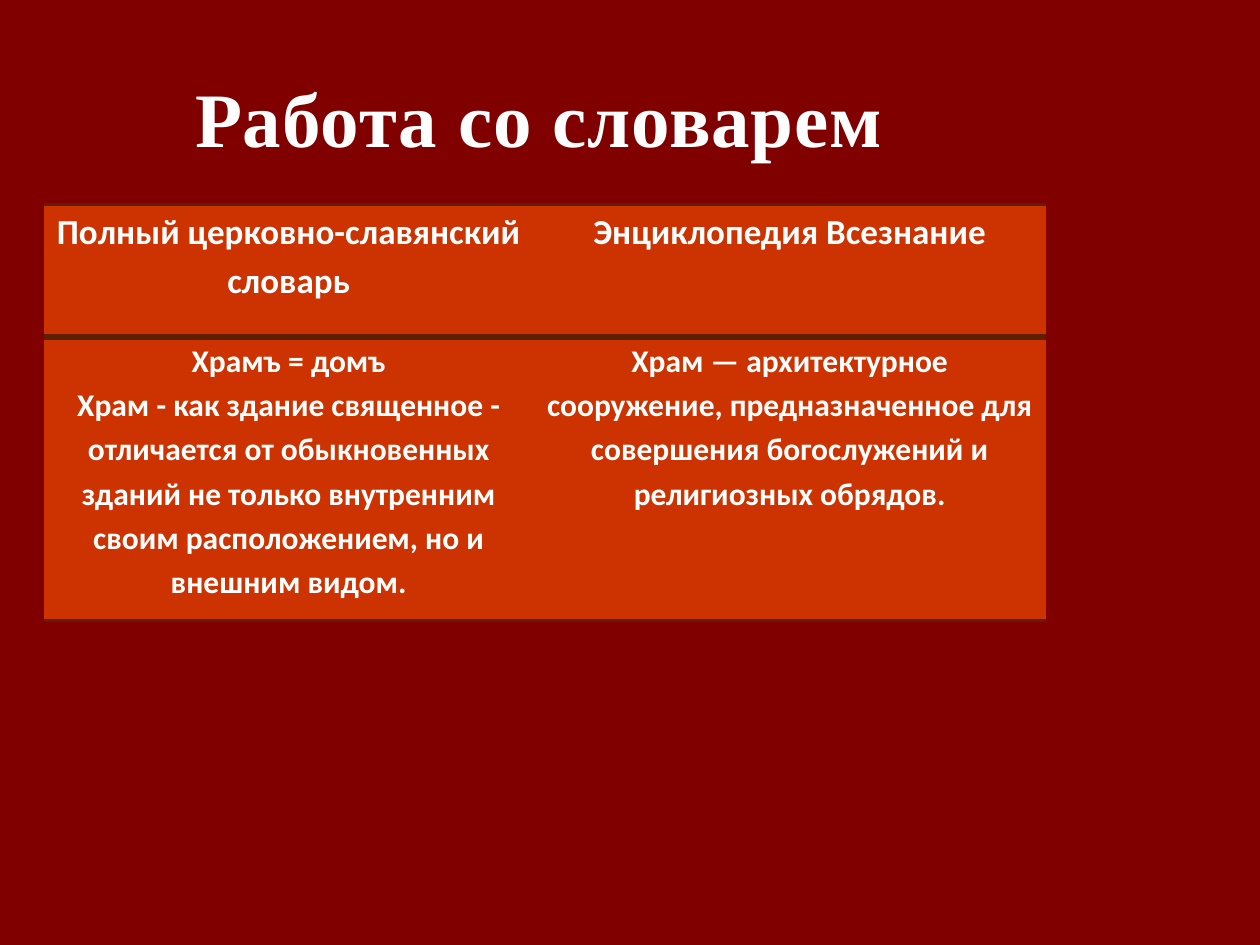
from dataclasses import dataclass

from lxml.etree import SubElement
from pptx import Presentation
from pptx.dml.color import RGBColor
from pptx.enum.text import MSO_ANCHOR, PP_ALIGN
from pptx.oxml import parse_xml
from pptx.oxml.ns import nsdecls, qn
from pptx.util import Cm, Pt

# Content: each cell is a list of paragraphs
TITLE = "Работа со словарем"
ROWS = [
    [["Полный церковно-славянский словарь"], ["Энциклопедия Всезнание"]],
    [
        ["Храмъ = домъ",
         "Храм - как здание священное - отличается от обыкновенных зданий "
         "не только внутренним своим расположением, но и внешним видом."],
        ["Храм — архитектурное сооружение, предназначенное для "
         "совершения богослужений и религиозных обрядов."],
    ],
]

# Layout in centimetres
SLIDE = (25.4, 19.05)
HEAD = (1.27, 0.76, 19.2, 3.18)
LEFT, TOP = 0.89, 4.12
WIDTHS = (9.86, 10.34)
HEIGHTS = (2.67, 5.72)
PAD = 0.18


@dataclass
class Theme:
    back: str = "800000"
    cell: str = "CC3300"
    rule: str = "5C1F00"
    title: str = "FEFEFE"
    text: str = "FFFFFF"
    serif: str = "Times New Roman"
    sans: str = "Calibri"
    head: int = 44
    sizes: tuple = (20, 18)     # text size of each table row
    rules: tuple = (2, 4, 2)    # rule above, between and below the rows


THEME = Theme()


def add_run(para, text, size, face, color):
    run = para.add_run()
    run.text = text
    font = run.font
    font.size, font.name, font.bold = Pt(size), face, True
    font.color.rgb = RGBColor.from_string(color)
    return run


def add_edges(cell, above, below):
    """Rule the top and bottom of a cell, leaving its sides open."""
    props = cell._tc.get_or_add_tcPr()
    sides = (("L", 0), ("R", 0), ("T", above), ("B", below))
    for spot, (side, width) in enumerate(sides):
        line = SubElement(props, qn(f"a:ln{side}"), w=str(Pt(width)))
        if width:
            fill = SubElement(line, qn("a:solidFill"))
            SubElement(fill, qn("a:srgbClr"), val=THEME.rule)
        else:
            SubElement(line, qn("a:noFill"))
        props.insert(spot, line)


def add_title(slide):
    box = slide.shapes.add_textbox(*map(Cm, HEAD))
    frame = box.text_frame
    frame.word_wrap = True
    frame.vertical_anchor = MSO_ANCHOR.MIDDLE
    para = frame.paragraphs[0]
    para.alignment = PP_ALIGN.CENTER
    run = add_run(para, TITLE, THEME.head, THEME.serif, THEME.title)
    # Letter spacing and soft text shadow
    props = run.font._element
    props.set("spc", "50")
    props.find(qn("a:solidFill")).addnext(parse_xml(
        f'<a:effectLst {nsdecls("a")}>'
        '<a:outerShdw blurRad="38100" dist="38100" dir="2700000">'
        f'<a:srgbClr val="{THEME.rule}"/></a:outerShdw></a:effectLst>'))


def fill_cell(cell, texts, row):
    cell.fill.solid()
    cell.fill.fore_color.rgb = RGBColor.from_string(THEME.cell)
    cell.margin_left = cell.margin_right = Cm(PAD)
    cell.margin_top = cell.margin_bottom = 0
    add_edges(cell, *THEME.rules[row:row + 2])
    frame = cell.text_frame
    for spot, text in enumerate(texts):
        para = frame.add_paragraph() if spot else frame.paragraphs[0]
        para.alignment = PP_ALIGN.CENTER
        para.line_spacing = 1.15
        add_run(para, text, THEME.sizes[row], THEME.sans, THEME.text)


def add_grid(slide):
    size = (LEFT, TOP, sum(WIDTHS), sum(HEIGHTS))
    shape = slide.shapes.add_table(len(ROWS), len(WIDTHS), *map(Cm, size))
    table = shape.table
    table.first_row = table.horz_banding = False
    for col, width in zip(table.columns, WIDTHS):
        col.width = Cm(width)
    for row, height in zip(table.rows, HEIGHTS):
        row.height = Cm(height)
    for r, cells in enumerate(ROWS):
        for c, texts in enumerate(cells):
            fill_cell(table.cell(r, c), texts, r)


def main():
    deck = Presentation()
    deck.slide_width, deck.slide_height = map(Cm, SLIDE)
    slide = deck.slides.add_slide(deck.slide_layouts[6])
    slide.background.fill.solid()
    slide.background.fill.fore_color.rgb = RGBColor.from_string(THEME.back)
    add_title(slide)
    add_grid(slide)
    deck.save("out.pptx")


if __name__ == "__main__":
    main()
